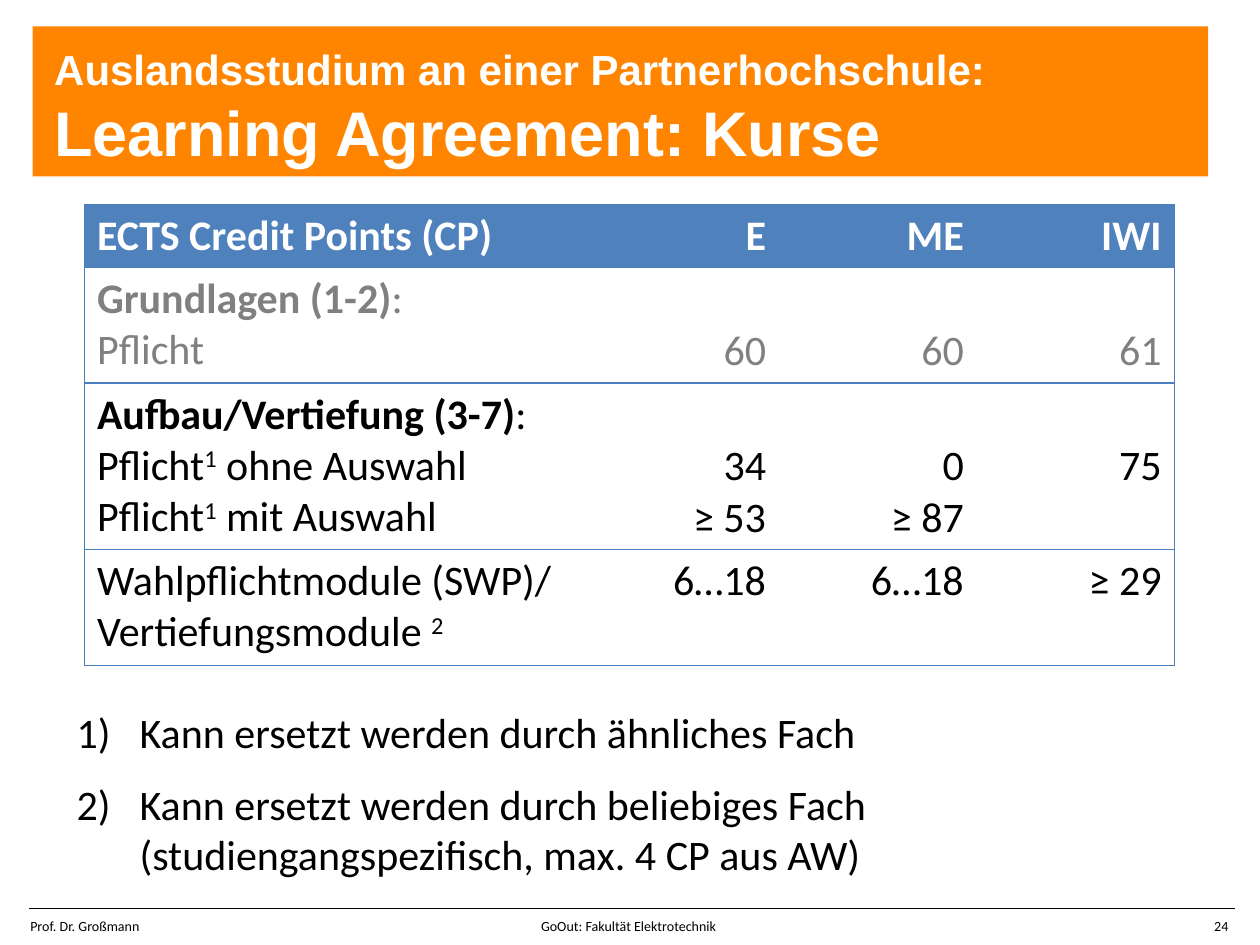
from dataclasses import dataclass

from lxml import etree
from pptx import Presentation
from pptx.dml.color import RGBColor
from pptx.enum.shapes import MSO_CONNECTOR, MSO_SHAPE
from pptx.enum.text import MSO_ANCHOR, PP_ALIGN
from pptx.oxml.ns import qn
from pptx.util import Inches, Pt

LEFT, RIGHT = PP_ALIGN.LEFT, PP_ALIGN.RIGHT
MIDDLE = MSO_ANCHOR.MIDDLE
RECTANGLE = MSO_SHAPE.RECTANGLE
STRAIGHT = MSO_CONNECTOR.STRAIGHT


@dataclass(frozen=True)
class Theme:
    banner: str = "FF8500"
    header: str = "4F81BD"
    border: str = "4B7EBC"
    white: str = "FFFFFF"
    black: str = "000000"
    muted: str = "808080"
    title_font: str = "Arial"
    body_font: str = "Calibri"
    title_size: int = 36
    body_size: int = 24
    footer_size: int = 8
    hairline: float = 0.75


THEME = Theme()
LINE_HEIGHT = 0.41  # one line of body text, in inches

# Each label line is a list of (text, style) runs; each value has its lines,
# and skipped lines push the values down beside the label line they belong to.
HEADINGS = ["ECTS Credit Points (CP)", "E", "ME", "IWI"]
CREDIT_ROWS = [
    (0.92, THEME.muted, 1,
     [[("Grundlagen (1-2)", "bold"), (":", "")], [("Pflicht", "")]],
     [["60"], ["60"], ["61"]]),
    (1.32, THEME.black, 1,
     [[("Aufbau/Vertiefung (3-7)", "bold"), (":", "")],
      [("Pflicht", ""), ("1", "super"), (" ohne Auswahl", "")],
      [("Pflicht", ""), ("1", "super"), (" mit Auswahl", "")]],
     [["34", "≥ 53"], ["0", "≥ 87"], ["75"]]),
    (0.92, THEME.black, 0,
     [[("Wahlpflichtmodule (SWP)/ Vertiefungsmodule ", ""), ("2", "super")]],
     [["6…18"], ["6…18"], ["≥ 29"]]),
]
FOOTNOTES = [
    "Kann ersetzt werden durch ähnliches Fach",
    "Kann ersetzt werden durch beliebiges Fach "
    "(studiengangspezifisch, max. 4 CP aus AW)",
]


def set_font(font, size, color, name=THEME.body_font, bold=None):
    font.size = Pt(size)
    font.name = name
    font.color.rgb = RGBColor.from_string(color)
    font.bold = bold


def add_text_frame(slide, left, top, width, height, inset=True):
    box = slide.shapes.add_textbox(
        Inches(left), Inches(top), Inches(width), Inches(height))
    frame = box.text_frame
    frame.word_wrap = True
    if not inset:
        frame.margin_left = frame.margin_right = 0
        frame.margin_top = frame.margin_bottom = 0
    return frame


def add_paragraphs(frame, count):
    return [frame.paragraphs[0]] + [frame.add_paragraph() for _ in range(count - 1)]


def add_banner(slide):
    banner = slide.shapes.add_shape(
        RECTANGLE, Inches(0.26), Inches(0.21), Inches(9.33), Inches(1.19))
    banner.shadow.inherit = False
    banner.fill.solid()
    banner.fill.fore_color.rgb = RGBColor.from_string(THEME.banner)
    banner.line.fill.background()

    frame = add_text_frame(slide, 0.43, 0.3, 7.72, 1.09, inset=False)
    frame.vertical_anchor = MIDDLE
    title = frame.paragraphs[0]
    for text, size in [
        ("Auslandsstudium an einer Partnerhochschule: ", THEME.body_size),
        ("Learning Agreement: Kurse", THEME.title_size),
    ]:
        run = title.add_run()
        run.text = text
        set_font(run.font, size, THEME.white, THEME.title_font, True)


def set_borders(cell, drawn):
    """Draw the named sides (L, R, T, B) and clear the others."""
    properties = cell._tc.get_or_add_tcPr()
    for side in "LRTB":
        line = etree.SubElement(properties, qn(f"a:ln{side}"),
                                w=str(Pt(THEME.hairline)))
        if side in drawn:
            fill = etree.SubElement(line, qn("a:solidFill"))
            etree.SubElement(fill, qn("a:srgbClr"), val=THEME.border)
        else:
            etree.SubElement(line, qn("a:noFill"))


def fill_cell(cell, lines, color, align, bold=None, skipped_lines=0):
    cell.margin_top = Inches(0.05 + skipped_lines * LINE_HEIGHT)
    paragraphs = add_paragraphs(cell.text_frame, len(lines))
    for paragraph, runs in zip(paragraphs, lines):
        paragraph.alignment = align
        set_font(paragraph.font, THEME.body_size, color, bold=bold)
        for text, style in runs:
            run = paragraph.add_run()
            run.text = text
            run.font.bold = bold or style == "bold"
            if style == "super":
                run._r.get_or_add_rPr().set("baseline", "30000")


def add_credit_table(slide):
    heights = [0.5] + [row[0] for row in CREDIT_ROWS]
    widths = [3.94] + [1.57] * 3
    table = slide.shapes.add_table(
        len(heights), len(widths), Inches(0.67), Inches(1.62),
        Inches(sum(widths)), Inches(sum(heights))).table
    table.horz_banding = False
    for column, width in zip(table.columns, widths):
        column.width = Inches(width)
    for row, height in zip(table.rows, heights):
        row.height = Inches(height)

    # Frame, row rules and fills
    for row_index, row in enumerate(table.rows):
        for column_index, cell in enumerate(row.cells):
            outer = {0: "L", len(widths) - 1: "R"}.get(column_index, "")
            set_borders(cell, "TB" + outer)
            if row_index == 0:
                cell.fill.solid()
                cell.fill.fore_color.rgb = RGBColor.from_string(THEME.header)
            else:
                cell.fill.background()

    # Headings
    for index, heading in enumerate(HEADINGS):
        fill_cell(table.cell(0, index), [[(heading, "")]], THEME.white,
                  RIGHT if index else LEFT, bold=True)

    # Credit points per degree programme
    for row_index, (_, color, skipped, label, programmes) in enumerate(CREDIT_ROWS, 1):
        fill_cell(table.cell(row_index, 0), label, color, LEFT)
        for column_index, values in enumerate(programmes, 1):
            fill_cell(table.cell(row_index, column_index),
                      [[(value, "")] for value in values],
                      color, RIGHT, skipped_lines=skipped)


def add_footnotes(slide):
    frame = add_text_frame(slide, 0.51, 5.56, 8.66, 1.48)
    paragraphs = add_paragraphs(frame, len(FOOTNOTES))
    for paragraph, note in zip(paragraphs, FOOTNOTES):
        properties = paragraph._p.get_or_add_pPr()
        properties.set("marL", str(Inches(0.5)))
        properties.set("indent", str(Inches(-0.5)))
        etree.SubElement(properties, qn("a:buFont"), typeface="+mj-lt")
        etree.SubElement(properties, qn("a:buAutoNum"), type="arabicParenR")
        paragraph.text = note
        set_font(paragraph.font, THEME.body_size, THEME.black)
    paragraphs[0].space_after = Pt(12)


def add_footer(slide):
    rule = slide.shapes.add_connector(
        STRAIGHT, Inches(0.23), Inches(7.21), Inches(9.8), Inches(7.21))
    rule.line.color.rgb = RGBColor.from_string(THEME.black)
    rule.line.width = Pt(THEME.hairline)
    etree.SubElement(rule._element.spPr, qn("a:effectLst"))

    frame = add_text_frame(slide, 0.24, 7.28, 9.61, 0.13, inset=False)
    footer = frame.paragraphs[0]
    tabs = etree.SubElement(footer._p.get_or_add_pPr(), qn("a:tabLst"))
    for position, align in [(4.75, "ctr"), (9.51, "r")]:
        etree.SubElement(tabs, qn("a:tab"), pos=str(Inches(position)), algn=align)
    footer.text = "Prof. Dr. Großmann\tGoOut: Fakultät Elektrotechnik\t24"
    set_font(footer.font, THEME.footer_size, THEME.black)


def main():
    presentation = Presentation()
    presentation.slide_width = Inches(10)
    presentation.slide_height = Inches(7.5)
    slide = presentation.slides.add_slide(presentation.slide_layouts[6])
    add_banner(slide)
    add_footer(slide)
    add_credit_table(slide)
    add_footnotes(slide)
    presentation.save("out.pptx")


if __name__ == "__main__":
    main()
